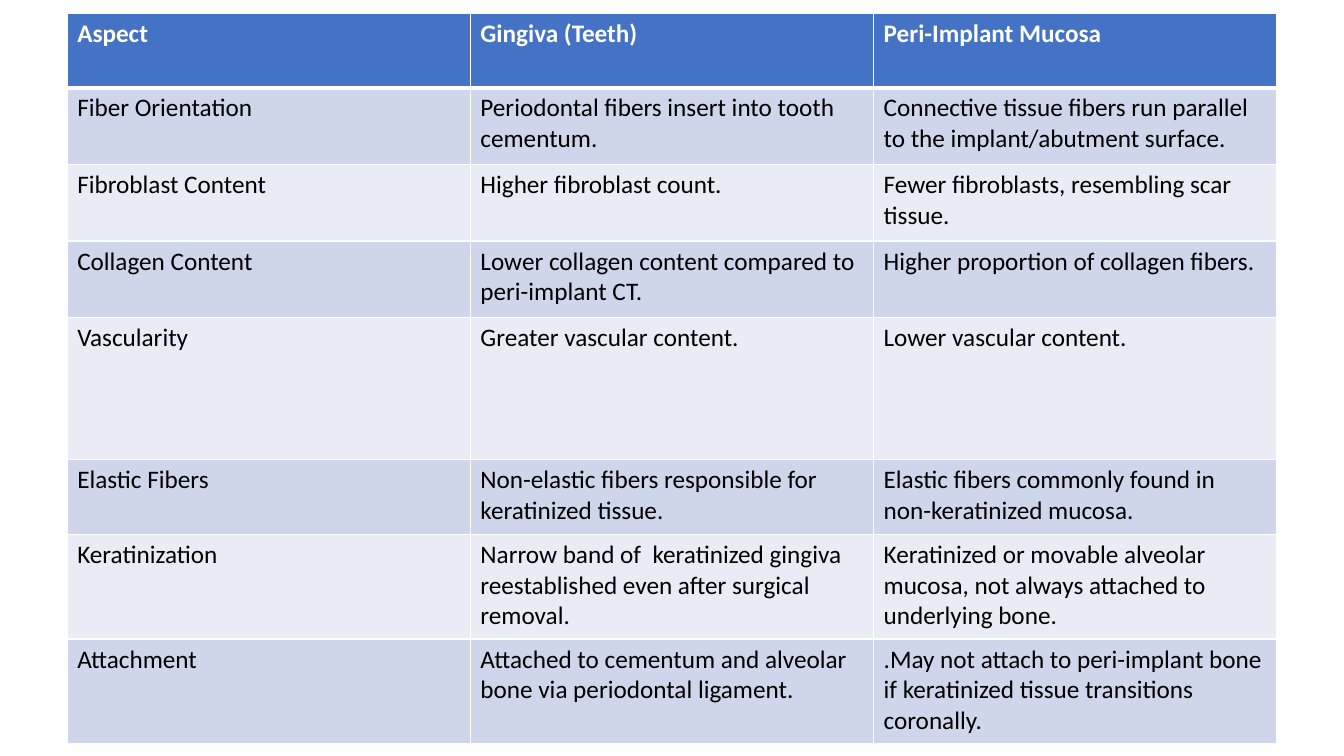
"""Build a slide comparing gingiva with peri-implant mucosa."""
from lxml import etree
from pptx import Presentation, util as u
from pptx.dml import color
from pptx.oxml import ns

WHITE, BLACK, HEADER_BLUE = "FFFFFF", "000000", "4472C4"
BAND_FILLS = ("E9EBF5", "CFD5EA")
HEADER_FORMAT = {"name": "Calibri", "size": u.Pt(18), "bold": True}
BODY_FORMAT = {**HEADER_FORMAT, "bold": False}

COMPARISON = [
    (53.3, "Aspect", "Gingiva (Teeth)", "Peri-Implant Mucosa"),
    (54.7, "Fiber Orientation",
     "Periodontal fibers insert into tooth cementum.",
     "Connective tissue fibers run parallel to the implant/abutment surface."),
    (54.7, "Fibroblast Content",
     "Higher fibroblast count.",
     "Fewer fibroblasts, resembling scar tissue."),
    (54.7, "Collagen Content",
     "Lower collagen content compared to peri-implant CT.",
     "Higher proportion of collagen fibers."),
    (101.5, "Vascularity",
     "Greater vascular content.",
     "Lower vascular content."),
    (53.3, "Elastic Fibers",
     "Non-elastic fibers responsible for keratinized tissue.",
     "Elastic fibers commonly found in non-keratinized mucosa."),
    (74.9, "Keratinization",
     "Narrow band of  keratinized gingiva reestablished even after surgical removal.",
     "Keratinized or movable alveolar mucosa, not always attached to underlying bone."),
    (74.9, "Attachment",
     "Attached to cementum and alveolar bone via periodontal ligament.",
     ".May not attach to peri-implant bone if keratinized tissue transitions coronally."),
]


def set_color(target, value):
    """Give a font or a fill a solid colour from a hex string."""
    fill = target.fill if hasattr(target, "fill") else target
    fill.solid()
    fill.fore_color.rgb = color.RGBColor.from_string(value)


def set_borders(cell, widths):
    """Draw white cell borders with the left, right, top and bottom widths in points."""
    properties = cell._tc.get_or_add_tcPr()
    for index, (side, width) in enumerate(zip("LRTB", widths)):
        line = etree.Element(ns.qn(f"a:ln{side}"), w=str(u.Pt(width)))
        solid = etree.SubElement(line, ns.qn("a:solidFill"))
        etree.SubElement(solid, ns.qn("a:srgbClr"), val=WHITE)
        properties.insert(index, line)


def format_cell(cell, content, row_index):
    """Fill in one cell in the header or banded body style."""
    is_header = row_index == 0
    cell.text = content
    font = cell.text_frame.paragraphs[0].runs[0].font
    for name, value in (HEADER_FORMAT if is_header else BODY_FORMAT).items():
        setattr(font, name, value)
    set_color(font, WHITE if is_header else BLACK)
    set_color(cell.fill, HEADER_BLUE if is_header else BAND_FILLS[row_index % 2])
    set_borders(cell, (1, 1, 3 if row_index == 1 else 1, 3 if is_header else 1))


def add_comparison_table(slide, left, top, width):
    """Place the comparison table with equal columns across the given width."""
    columns = len(COMPARISON[0]) - 1
    height = sum(row[0] for row in COMPARISON)
    table = slide.shapes.add_table(
        len(COMPARISON), columns, u.Pt(left), u.Pt(top), u.Pt(width), u.Pt(height)
    ).table
    for column in table.columns:
        column.width = u.Pt(width / columns)
    for row_index, (row_height, *contents) in enumerate(COMPARISON):
        table.rows[row_index].height = u.Pt(row_height)
        for column_index, content in enumerate(contents):
            format_cell(table.cell(row_index, column_index), content, row_index)


def main():
    """Create and save the presentation."""
    presentation = Presentation()
    presentation.slide_width, presentation.slide_height = u.Pt(960), u.Pt(540)
    slide = presentation.slides.add_slide(presentation.slide_layouts[6])
    add_comparison_table(slide, 48, 9.5, 864)
    presentation.save("out.pptx")


if __name__ == "__main__":
    main()
